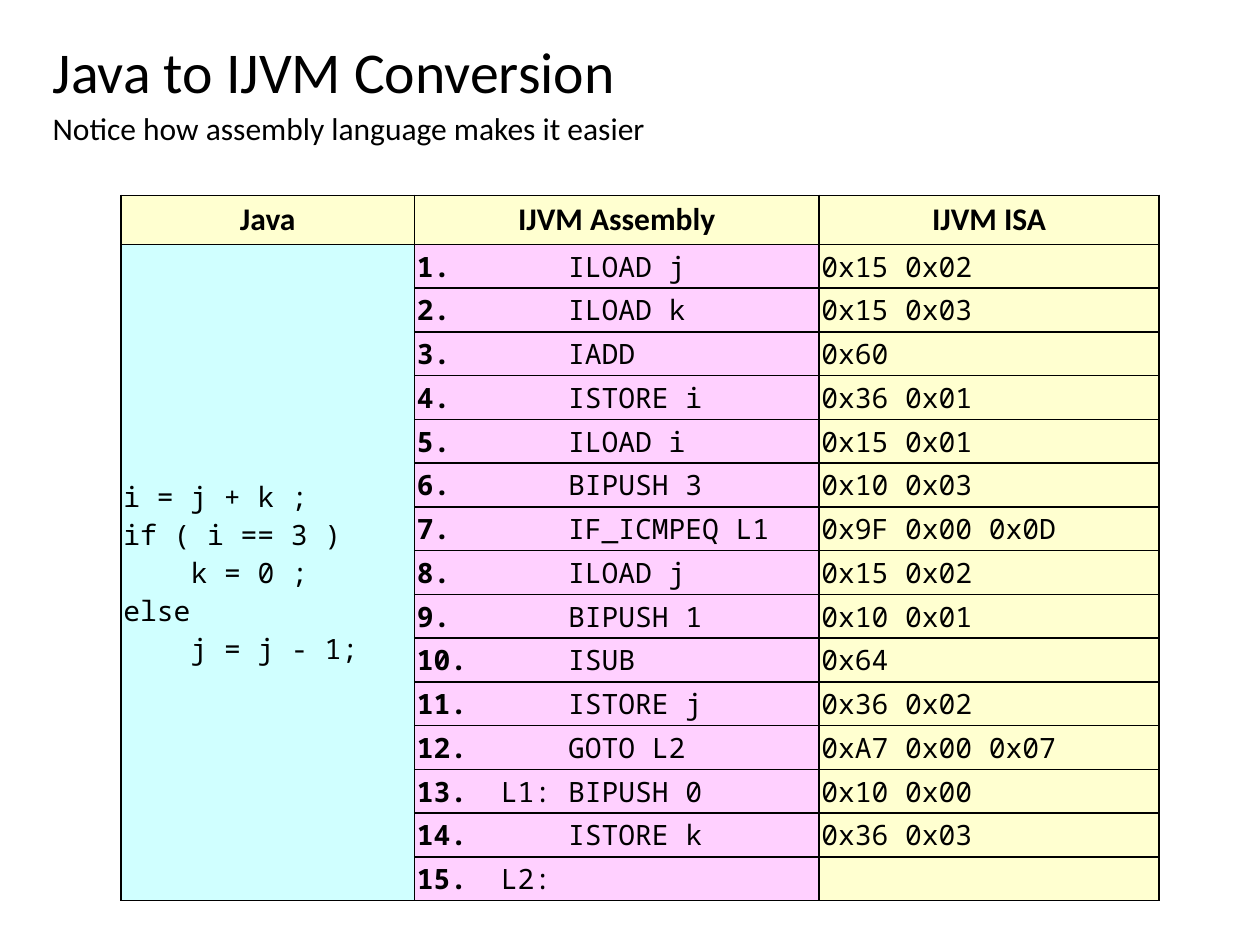
from lxml.etree import SubElement as Sub
from pptx import Presentation
from pptx.dml.color import RGBColor as RGB
from pptx.enum.text import MSO_ANCHOR as Anchor, PP_ALIGN as Align
from pptx.oxml import parse_xml
from pptx.oxml.ns import qn
from pptx.util import Inches, Pt

BLACK, CREAM, CYAN, PINK = "000000", "FFFFD0", "D0FFFF", "FFD0FF"
SANS, MONO = "Calibri", "Noto Sans Mono"
NS = "http://schemas.openxmlformats.org/drawingml/2006/main"

HEADS = ["Java", "IJVM Assembly", "IJVM ISA"]
# Source lines with their indent in characters
JAVA = [("i = j + k ;", 0), ("if ( i == 3 )", 0), ("k = 0 ;", 4),
        ("else", 0), ("j = j - 1;", 4)]
# Label, instruction, machine code
CODE = [
    ("", "ILOAD j", "0x15 0x02"),
    ("", "ILOAD k", "0x15 0x03"),
    ("", "IADD", "0x60"),
    ("", "ISTORE i", "0x36 0x01"),
    ("", "ILOAD i", "0x15 0x01"),
    ("", "BIPUSH 3", "0x10 0x03"),
    ("", "IF_ICMPEQ L1", "0x9F 0x00 0x0D"),
    ("", "ILOAD j", "0x15 0x02"),
    ("", "BIPUSH 1", "0x10 0x01"),
    ("", "ISUB", "0x64"),
    ("", "ISTORE j", "0x36 0x02"),
    ("", "GOTO L2", "0xA7 0x00 0x07"),
    ("L1:", "BIPUSH 0", "0x10 0x00"),
    ("", "ISTORE k", "0x36 0x03"),
    ("L2:", "", ""),
]
CHAR = Pt(9.6)  # width of one 16 pt mono character
TALL, HEAD = 5.6, 0.39  # heights of the table and its first row


def rgb(color):
    return RGB.from_string(color)


def style(frame, size, face, align=Align.LEFT, bold=False):
    for para in frame.paragraphs:
        para.alignment = align
        for run in para.runs:
            font = run.font
            font.size, font.name, font.bold = Pt(size), face, bold
            font.color.rgb = rgb(BLACK)


prs = Presentation()
prs.slide_width, prs.slide_height = Inches(10), Inches(7.5)
slide = prs.slides.add_slide(prs.slide_layouts[5])

# Title and subtitle
title = slide.shapes.title
title.left, title.top = Inches(0.32), Inches(0.1)
title.width, title.height = Inches(9.35), Inches(0.99)
title.text_frame.text = "Java to IJVM Conversion"
title.text_frame.vertical_anchor = Anchor.MIDDLE
title.text_frame.paragraphs[0].line_spacing = 0.9
style(title.text_frame, 33, SANS)

sub = slide.shapes.add_textbox(Inches(0.32), Inches(0.85), Inches(9.2), Inches(5.95))
sub.text_frame.word_wrap = True
sub.text_frame.text = "Notice how assembly language makes it easier"
sub.text_frame.paragraphs[0].line_spacing = 0.9
sub.text_frame.paragraphs[0].space_before = Pt(7.5)
style(sub.text_frame, 18, SANS)

# Table grid
table = slide.shapes.add_table(len(CODE) + 1, 3, Inches(0.96), Inches(1.55),
                               Inches(8.24), Inches(TALL)).table
for col, width in zip(table.columns, (2.33, 3.21, 2.7)):
    col.width = Inches(width)
for num, row in enumerate(table.rows):
    row.height = Inches((TALL - HEAD) / len(CODE) if num else HEAD)
    fills = (CYAN, PINK, CREAM) if num else (CREAM,) * 3
    for cell, fill in zip(row.cells, fills):
        cell.vertical_anchor = Anchor.MIDDLE
        cell.margin_left = cell.margin_right = Inches(0.02)
        cell.margin_top = cell.margin_bottom = Inches(0.02)
        props = cell._tc.get_or_add_tcPr()
        for side in "LRTB":
            props.append(parse_xml(
                f'<a:ln{side} xmlns:a="{NS}" w="12700"><a:solidFill>'
                f'<a:srgbClr val="{BLACK}"/></a:solidFill></a:ln{side}>'))
        cell.fill.solid()
        cell.fill.fore_color.rgb = rgb(fill)

# Table text
for col, head in enumerate(HEADS):
    frame = table.cell(0, col).text_frame
    frame.text = head
    style(frame, 18, SANS, Align.CENTER, True)

java = table.cell(1, 0)
java.merge(table.cell(len(CODE), 0))
java.text_frame.text = "\n".join(line for line, _ in JAVA)
style(java.text_frame, 16, MONO)
for para, (_, indent) in zip(java.text_frame.paragraphs, JAVA):
    para._p.get_or_add_pPr().set("marL", str(indent * CHAR))

for num, (label, op, isa) in enumerate(CODE, 1):
    frame = table.cell(num, 1).text_frame
    frame.text = f"{num}."
    para = frame.paragraphs[0]
    para.add_run().text = f"\t{label}\t{op}" if op else f"\t{label}"
    style(frame, 16, MONO)
    para.runs[0].font.bold = True
    tabs = Sub(para._p.get_or_add_pPr(), qn("a:tabLst"))
    for stop in (5, 9):
        Sub(tabs, qn("a:tab"), pos=str(stop * CHAR), algn="l")
    if isa:
        frame = table.cell(num, 2).text_frame
        frame.text = isa
        style(frame, 16, MONO)

prs.save("out.pptx")
